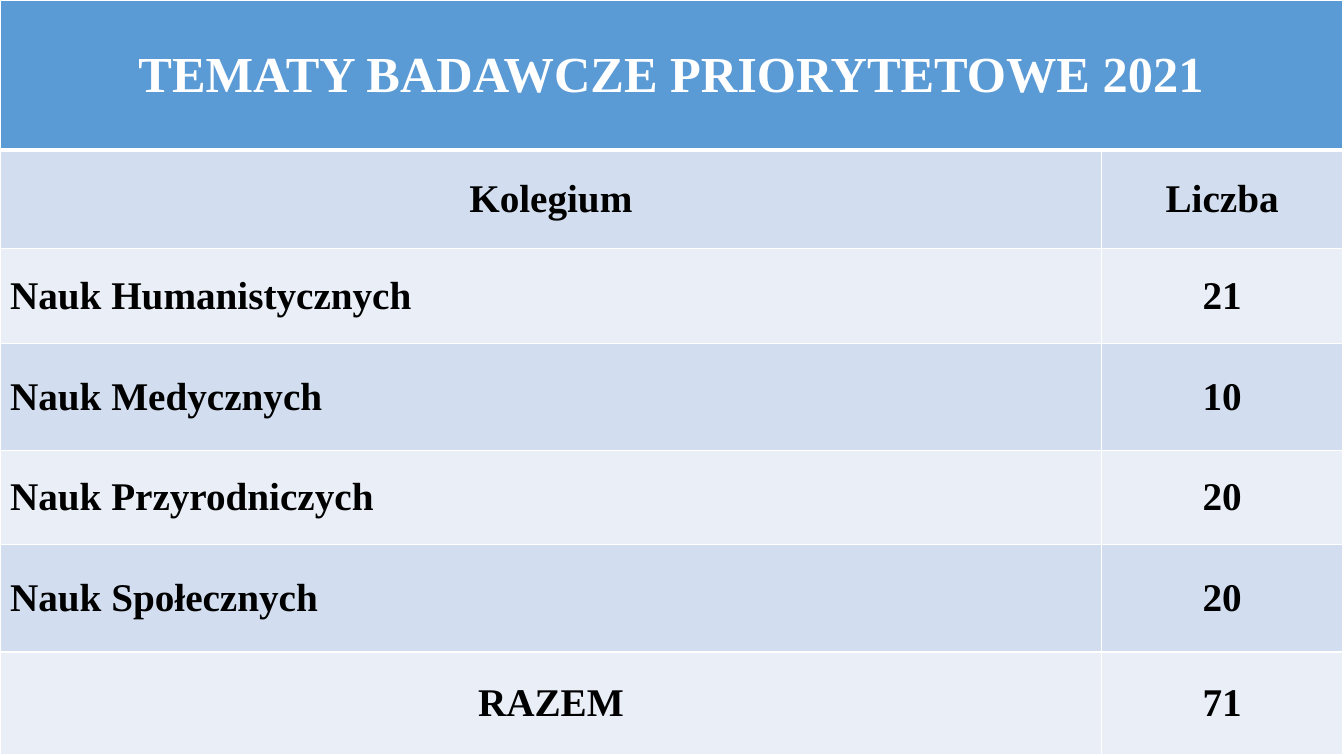
"""Build a slide with one full-size table of priority research topics by college."""
from lxml.etree import SubElement
from pptx import Presentation
from pptx.dml.color import RGBColor as Rgb
from pptx.enum.text import MSO_ANCHOR as Anchor, PP_ALIGN as Align
from pptx.oxml.ns import qn
from pptx.util import Pt

FONT = "Times New Roman"
HUES = {"head": "5B9BD5", "dark": "D2DEEF", "light": "EAEFF7",
        "white": "FFFFFF", "black": "000000"}
TITLE = "TEMATY BADAWCZE PRIORYTETOWE 2021"
ROWS = [
    ("Kolegium", "Liczba"),
    ("Nauk Humanistycznych", "21"),
    ("Nauk Medycznych", "10"),
    ("Nauk Przyrodniczych", "20"),
    ("Nauk Społecznych", "20"),
    ("RAZEM", "71"),
]
WIDTHS = [787, 172]
HEIGHTS = [107.3, 70.5, 67.7, 76.3, 67, 77, 73.4]


def edge(cell, top, base):
    """Draw white borders round a cell, with the given top and base widths."""
    props = cell._tc.get_or_add_tcPr()
    for side, width in zip("LRTB", (1, 1, top, base)):
        line = SubElement(props, qn(f"a:ln{side}"), w=str(Pt(width)))
        paint = SubElement(line, qn("a:solidFill"))
        SubElement(paint, qn("a:srgbClr"), val=HUES["white"])


def tint(cell, hue):
    """Fill a cell with a named colour."""
    cell.fill.solid()
    cell.fill.fore_color.rgb = Rgb.from_string(HUES[hue])


def write(cell, text, size, hue, align):
    """Put one bold run of text in a cell."""
    cell.vertical_anchor = Anchor.MIDDLE
    para = cell.text_frame.paragraphs[0]
    para.alignment = align
    run = para.add_run()
    run.text = text
    run.font.name = FONT
    run.font.size = Pt(size)
    run.font.bold = True
    run.font.color.rgb = Rgb.from_string(HUES[hue])


def add_grid(slide):
    """Add the empty table with its column widths and row heights."""
    frame = slide.shapes.add_table(len(HEIGHTS), len(WIDTHS), Pt(0), Pt(0),
                                   Pt(sum(WIDTHS)), Pt(sum(HEIGHTS)))
    grid = frame.table
    for col, width in zip(grid.columns, WIDTHS):
        col.width = Pt(width)
    for row, height in zip(grid.rows, HEIGHTS):
        row.height = Pt(height)
    return grid


def fill_head(grid):
    """Merge the top row and set the title in it."""
    left, right = grid.cell(0, 0), grid.cell(0, 1)
    left.merge(right)
    for cell in (left, right):
        edge(cell, 1, 3)
        tint(cell, "head")
    write(left, TITLE, 36, "white", Align.CENTER)


def fill_rows(grid):
    """Set the banded rows, with college names to the left."""
    for i, row in enumerate(ROWS, 1):
        for j, text in enumerate(row):
            cell = grid.cell(i, j)
            edge(cell, 3 if i == 1 else 1, 1)
            tint(cell, "dark" if i % 2 else "light")
            name = j == 0 and 1 < i < len(ROWS)
            write(cell, text, 28, "black", Align.LEFT if name else Align.CENTER)


def main():
    """Build and save the slide."""
    deck = Presentation()
    deck.slide_width, deck.slide_height = Pt(960), Pt(540)
    slide = deck.slides.add_slide(deck.slide_layouts[6])
    grid = add_grid(slide)
    fill_head(grid)
    fill_rows(grid)
    deck.save("out.pptx")


if __name__ == "__main__":
    main()
